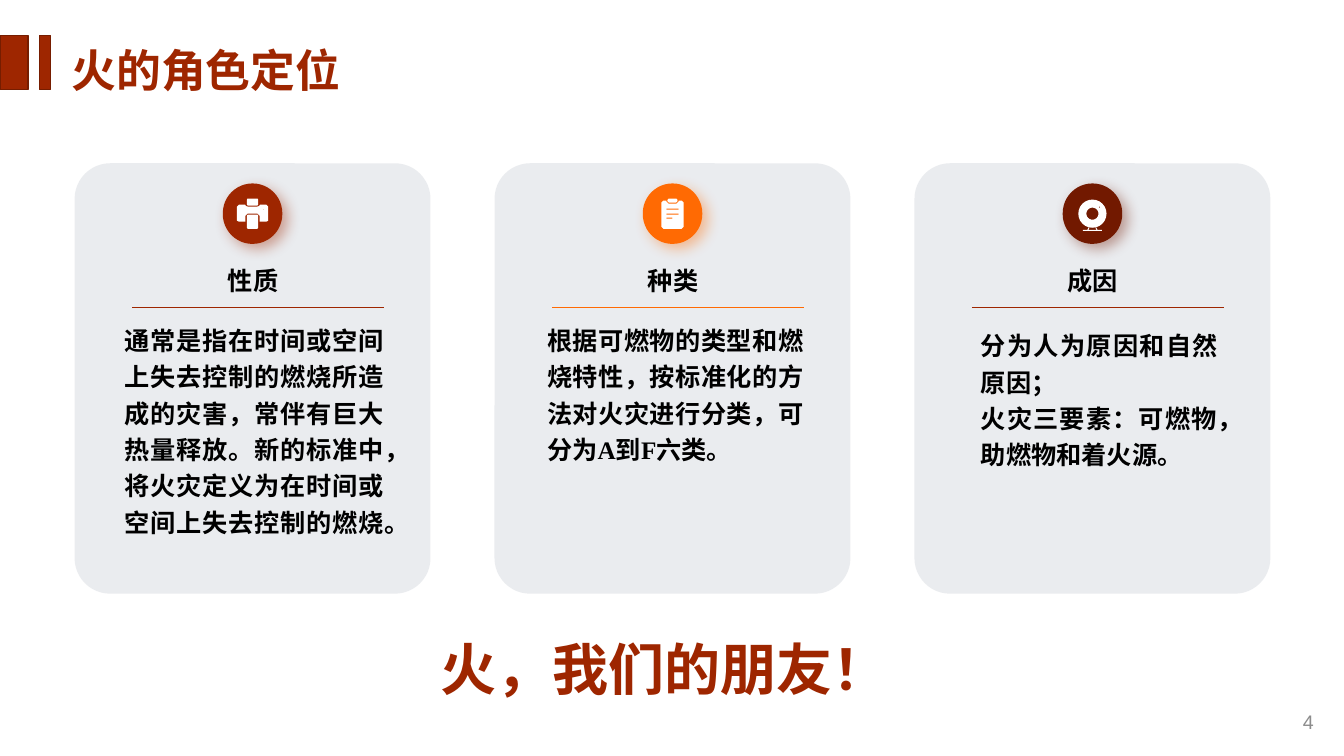
"""Build the slide on the role of fire: three cards, a heading and a slogan."""
import math
from dataclasses import dataclass

from lxml import etree
from pptx import Presentation, slide as slides, util as u
from pptx.dml import color
from pptx.enum import shapes, text
from pptx.oxml import ns
from pptx.shapes import autoshape

COLUMNS, ROWS = 1333, 750
CELL = u.Inches(0.01)
FIRST_CENTRE, CARD_STEP, BADGE_ROW = 250.5, 416.5, 212

Contour = list[tuple[float, float]]


@dataclass(frozen=True)
class Theme:
    rust: str = "9E2600"
    orange: str = "FF6A03"
    maroon: str = "721900"
    bar_edge: str = "761D00"
    slate: str = "778495"
    white: str = "FFFFFF"
    black: str = "000000"
    grey: str = "8C8C8C"
    heading: int = 32
    slogan: int = 40
    body: int = 18
    number: int = 14
    chinese: str = "Noto Sans CJK SC"
    sans: str = "Arial"
    serif: str = "Times New Roman"


THEME = Theme()


@dataclass(frozen=True)
class Area:
    left: float
    top: float
    width: float
    height: float

    def emu(self) -> list[int]:
        return [round(side * CELL) for side in (self.left, self.top, self.width, self.height)]


@dataclass(frozen=True)
class Span:
    words: str
    font: str | None = None


@dataclass(frozen=True)
class Style:
    size: int
    ink: str
    font: str = THEME.sans
    bold: bool = True
    align: text.PP_ALIGN = text.PP_ALIGN.LEFT
    anchor: text.MSO_ANCHOR = text.MSO_ANCHOR.BOTTOM
    spacing: float = 1.0
    wrap: bool = True


@dataclass(frozen=True)
class Card:
    label: str
    badge: str
    rule: str
    icon: list[Contour]
    body: Area
    paras: tuple[tuple[Span, ...], ...]


LABEL = Style(THEME.body, THEME.black, THEME.chinese, align=text.PP_ALIGN.CENTER, wrap=False)
BODY = Style(THEME.body, THEME.black, THEME.chinese, align=text.PP_ALIGN.JUSTIFY,
             anchor=text.MSO_ANCHOR.TOP, spacing=1.2)
HEADING = Style(THEME.heading, THEME.rust, spacing=0.9)
SLOGAN = Style(THEME.slogan, THEME.rust)
NUMBER = Style(THEME.number, THEME.grey, bold=False, align=text.PP_ALIGN.RIGHT,
               anchor=text.MSO_ANCHOR.MIDDLE)


def arc(x: float, y: float, radius: float, start: int = 0, sweep: int = 360) -> Contour:
    """Return points along an arc, more of them for a larger radius."""
    pieces = round(sweep * min(24, 8 * radius) / 360)
    angles = [math.radians(start + sweep * step / max(pieces, 1)) for step in range(pieces + 1)]
    return [(x + radius * math.cos(angle), y + radius * math.sin(angle)) for angle in angles]


def rounded(left: float, top: float, width: float, height: float, radius: float = 0) -> Contour:
    """Return the outline of a rectangle with rounded corners."""
    near_x, far_x = left + radius, left + width - radius
    near_y, far_y = top + radius, top + height - radius
    corners = ((near_x, near_y, 180), (far_x, near_y, 270), (far_x, far_y, 0), (near_x, far_y, 90))
    return [point for x, y, start in corners for point in arc(x, y, radius, start, 90)]


def mirrored(half: Contour) -> Contour:
    """Close a right-hand half outline with its reflection."""
    return half + [(-x, y) for x, y in reversed(half)]


PRINTER = [
    mirrored([(4.5, -7), (6.5, -7.5), (7.5, -9), (13.5, -9), (15.5, -7), (15.5, 7),
              (13.5, 8), (7, 8), (7, 2), (5, 0)]),
    rounded(-5.5, 1, 11, 14, 1),
    rounded(-5.5, -15, 11, 7, 1),
    arc(11.2, -4.5, 0.5),
]
CLIPBOARD = [
    mirrored([(4, -10), (6, -12), (6, -13), (9, -13), (11, -11), (11, 13), (9, 15)]),
    rounded(-5, -15, 10, 4, 2),
    *[rounded(-6, row, width, 1) for row, width in ((-5, 12), (0, 12), (4, 6))],
]
CAMERA = [
    arc(0, 0, 14), arc(0, 0, 6), arc(7, -6.5, 0.7),
    *[[(side * x, y) for x, y in ((3, 14), (4, 14), (5, 16), (4, 16))] for side in (-1, 1)],
    rounded(-9.5, 16, 19, 1),
]

CARDS = (
    Card("性质", THEME.rust, THEME.rust, PRINTER, Area(-136.5, 312, 277, 198), (
        (Span("通常是指在时间或空间上失去控制的燃烧所造成的灾害，常伴有巨大热量释放。"
              "新的标准中，将火灾定义为在时间或空间上失去控制的燃烧。"),),)),
    Card("种类", THEME.orange, THEME.orange, CLIPBOARD, Area(-134, 312, 274, 155), (
        (Span("根据可燃物的类型和燃烧特性，按标准化的方法对火灾进行分类，可分为"),
         Span("A到F六类", THEME.serif), Span("。")),)),
    Card("成因", THEME.maroon, THEME.rust, CAMERA, Area(-120.5, 317, 255, 155), (
        (Span("分为人为原因和自然原因；"),),
        (Span("火灾三要素：可燃物，助燃物和着火源。"),))),
)


def add_text(page: slides.Slide, area: Area, paras: tuple[tuple[Span, ...], ...], style: Style) -> None:
    """Write styled paragraphs into a text box."""
    frame = page.shapes.add_textbox(*area.emu()).text_frame
    frame.word_wrap, frame.vertical_anchor = style.wrap, style.anchor
    for index, spans in enumerate(paras):
        para = frame.add_paragraph() if index else frame.paragraphs[0]
        para.alignment, para.line_spacing = style.align, style.spacing
        font = para.font
        font.size, font.bold, font.name = u.Pt(style.size), style.bold, style.font
        font.color.rgb = color.RGBColor.from_string(style.ink)
        defaults = para._p.pPr.find(ns.qn("a:defRPr"))
        etree.SubElement(defaults, ns.qn("a:ea"), typeface=THEME.chinese)
        for span in spans:
            run = para.add_run()
            run.text = span.words
            if span.font:
                run.font.name = span.font


def paint(shape: autoshape.Shape, fill: str, opacity: int = 100, edge: str | None = None) -> None:
    """Give a shape a flat fill and an optional edge."""
    shape.shadow.inherit = False
    shape.fill.solid()
    shape.fill.fore_color.rgb = color.RGBColor.from_string(fill)
    if opacity < 100:
        tint = shape._element.spPr.find(ns.qn("a:solidFill"))[0]
        etree.SubElement(tint, ns.qn("a:alpha"), val=str(opacity * 1000))
    if edge:
        shape.line.color.rgb = color.RGBColor.from_string(edge)
        shape.line.width = u.Pt(1)
    else:
        shape.line.fill.background()


def add_panel(page: slides.Slide, area: Area, fill: str, corner: float, opacity: int = 100) -> autoshape.Shape:
    """Add a rounded panel."""
    panel = page.shapes.add_shape(shapes.MSO_SHAPE.ROUNDED_RECTANGLE, *area.emu())
    panel.adjustments[0] = corner
    paint(panel, fill, opacity)
    return panel


def add_glow(badge: autoshape.Shape, tint: str) -> None:
    """Cast a soft tinted shadow from a badge."""
    effects = badge._element.spPr.find(ns.qn("a:effectLst"))
    shadow = etree.SubElement(effects, ns.qn("a:outerShdw"), blurRad=str(int(u.Pt(10))),
                              dist=str(int(u.Pt(5))), dir="2700000", algn="tl", rotWithShape="0")
    shade = etree.SubElement(shadow, ns.qn("a:srgbClr"), val=tint)
    etree.SubElement(shade, ns.qn("a:alpha"), val="40000")


def add_icon(page: slides.Slide, centre: float, contours: list[Contour]) -> None:
    """Draw white contours around the middle of a badge."""
    placed = [[((centre + x) * CELL, (BADGE_ROW + y) * CELL) for x, y in contour] for contour in contours]
    builder = page.shapes.build_freeform(*placed[0][0])
    for index, contour in enumerate(placed):
        if index:
            builder.move_to(*contour[0])
        builder.add_line_segments(contour[1:], close=True)
    paint(builder.convert_to_shape(), THEME.white)


def add_card(page: slides.Slide, centre: float, card: Card) -> None:
    """Draw one card about its centre column."""
    add_panel(page, Area(centre - 176.5, 162, 353, 427), THEME.slate, 0.1, 15)
    add_glow(add_panel(page, Area(centre - 29.5, 182, 59, 60), card.badge, 0.5), card.badge)
    add_icon(page, centre, card.icon)
    add_text(page, Area(centre - 138.5, 257, 278, 41), ((Span(card.label),),), LABEL)
    left, top, width, _ = Area(centre - 119.5, 305, 250, 0).emu()
    rule = page.shapes.add_connector(shapes.MSO_CONNECTOR.STRAIGHT, left, top, left + width, top)
    rule.line.color.rgb = color.RGBColor.from_string(card.rule)
    rule.line.width = u.Pt(1)
    etree.SubElement(rule._element.spPr, ns.qn("a:effectLst"))
    body = card.body
    add_text(page, Area(centre + body.left, body.top, body.width, body.height), card.paras, BODY)


def main() -> None:
    """Assemble and save the deck."""
    deck = Presentation()
    deck.slide_width, deck.slide_height = COLUMNS * CELL, ROWS * CELL
    page = deck.slides.add_slide(deck.slide_layouts[6])
    for index, card in enumerate(CARDS):
        add_card(page, FIRST_CENTRE + index * CARD_STEP, card)
    add_text(page, Area(427, 589, 549, 112), ((Span("火，我们的朋友！"),),), SLOGAN)
    add_text(page, Area(61, 24, 541, 77), ((Span("火的角色定位"),),), HEADING)
    for left, width in ((39, 11), (0, 28)):
        bar = page.shapes.add_shape(shapes.MSO_SHAPE.RECTANGLE, *Area(left, 35, width, 54).emu())
        paint(bar, THEME.rust, edge=THEME.bar_edge)
    add_text(page, Area(913, 701, 400, 30), ((Span("4"),),), NUMBER)
    deck.save("out.pptx")


if __name__ == "__main__":
    main()
